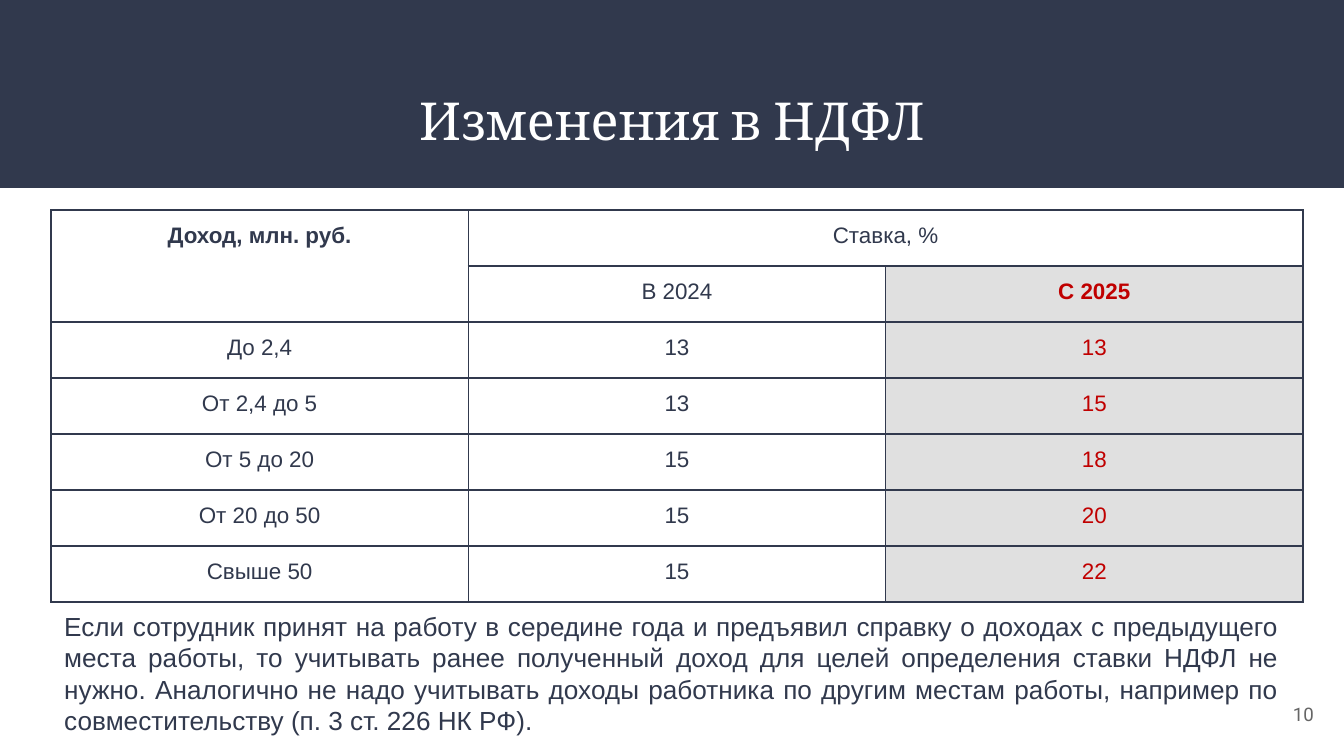
from lxml.etree import SubElement
from pptx import Presentation
from pptx.dml.color import RGBColor
from pptx.enum.shapes import MSO_SHAPE
from pptx.enum.text import MSO_ANCHOR, PP_ALIGN
from pptx.oxml.ns import qn
from pptx.util import Pt

EMU_PER_PX = 914400 / 134.4
COLORS = {"navy": "31394D", "white": "FFFFFF", "red": "C00000",
          "shade": "E0E0E0", "gray": "666666"}


def px(*lengths):
    return [round(length * EMU_PER_PX) for length in lengths]


def write(frame, text, font, size, color, align, bold=False):
    frame.word_wrap = True
    frame.margin_left = frame.margin_right = frame.margin_top = frame.margin_bottom = Pt(7.2)
    paragraph = frame.paragraphs[0]
    paragraph.text = text
    paragraph.alignment = align
    paragraph.font.name = font
    paragraph.font.size = Pt(size)
    paragraph.font.bold = bold
    paragraph.font.color.rgb = RGBColor.from_string(COLORS[color])


presentation = Presentation()
presentation.slide_width, presentation.slide_height = px(1344, 756)
slide = presentation.slides.add_slide(presentation.slide_layouts[5])

# Header band, behind the title
band = slide.shapes.add_shape(MSO_SHAPE.RECTANGLE, *px(0, 0, 1344, 188))
band.shadow.inherit = False
band.fill.solid()
band.fill.fore_color.rgb = RGBColor.from_string(COLORS["navy"])
band.line.fill.background()
title = slide.shapes.title
title._element.addprevious(band._element)

title.left, title.top, title.width, title.height = px(46, 74, 1252, 91)
write(title.text_frame, "Изменения в НДФЛ", "Cambria", 28, "white", PP_ALIGN.CENTER)
title.text_frame.vertical_anchor = MSO_ANCHOR.MIDDLE

# Note under the table
note = slide.shapes.add_textbox(*px(51, 597, 1241, 153))
write(note.text_frame,
      "Если сотрудник принят на работу в середине года и предъявил справку о доходах "
      "с предыдущего места работы, то учитывать ранее полученный доход для целей "
      "определения ставки НДФЛ не нужно. Аналогично не надо учитывать доходы работника "
      "по другим местам работы, например по совместительству (п. 3 ст. 226 НК РФ).",
      "Arial", 14, "navy", PP_ALIGN.JUSTIFY)

# Tax rate table
rows = [
    ("Доход, млн. руб.", "Ставка, %", ""),
    ("", "В 2024", "С 2025"),
    ("До 2,4", "13", "13"),
    ("От 2,4 до 5", "13", "15"),
    ("От 5 до 20", "15", "18"),
    ("От 20 до 50", "15", "20"),
    ("Свыше 50", "15", "22"),
]
table = slide.shapes.add_table(len(rows), 3, *px(51, 210, 1252, 392)).table
table.first_row = table.horz_banding = False
for row in table.rows:
    row.height = px(56)[0]

for row_index, texts in enumerate(rows):
    for column_index, text in enumerate(texts):
        cell = table.cell(row_index, column_index)
        is_new_rate = column_index == 2 and row_index > 0
        write(cell.text_frame, text, "Arial", 12, "red" if is_new_rate else "navy",
              PP_ALIGN.CENTER, bold=text in ("Доход, млн. руб.", "С 2025"))
        cell.margin_left = cell.margin_right = cell.margin_top = cell.margin_bottom = Pt(7.2)
        properties = cell._tc.get_or_add_tcPr()
        for side in ("a:lnL", "a:lnR", "a:lnT", "a:lnB"):
            border = SubElement(properties, qn(side), w=str(Pt(1)))
            fill = SubElement(border, qn("a:solidFill"))
            SubElement(fill, qn("a:srgbClr"), val=COLORS["navy"])
        if is_new_rate:
            cell.fill.solid()
            cell.fill.fore_color.rgb = RGBColor.from_string(COLORS["shade"])
        else:
            cell.fill.background()

table.cell(0, 0).merge(table.cell(1, 0))
table.cell(0, 1).merge(table.cell(0, 2))

# Slide number
number = slide.shapes.add_textbox(*px(1246, 685, 81, 58))
write(number.text_frame, "10", "Roboto", 10, "gray", PP_ALIGN.RIGHT)
number.text_frame.vertical_anchor = MSO_ANCHOR.MIDDLE

presentation.save("out.pptx")
